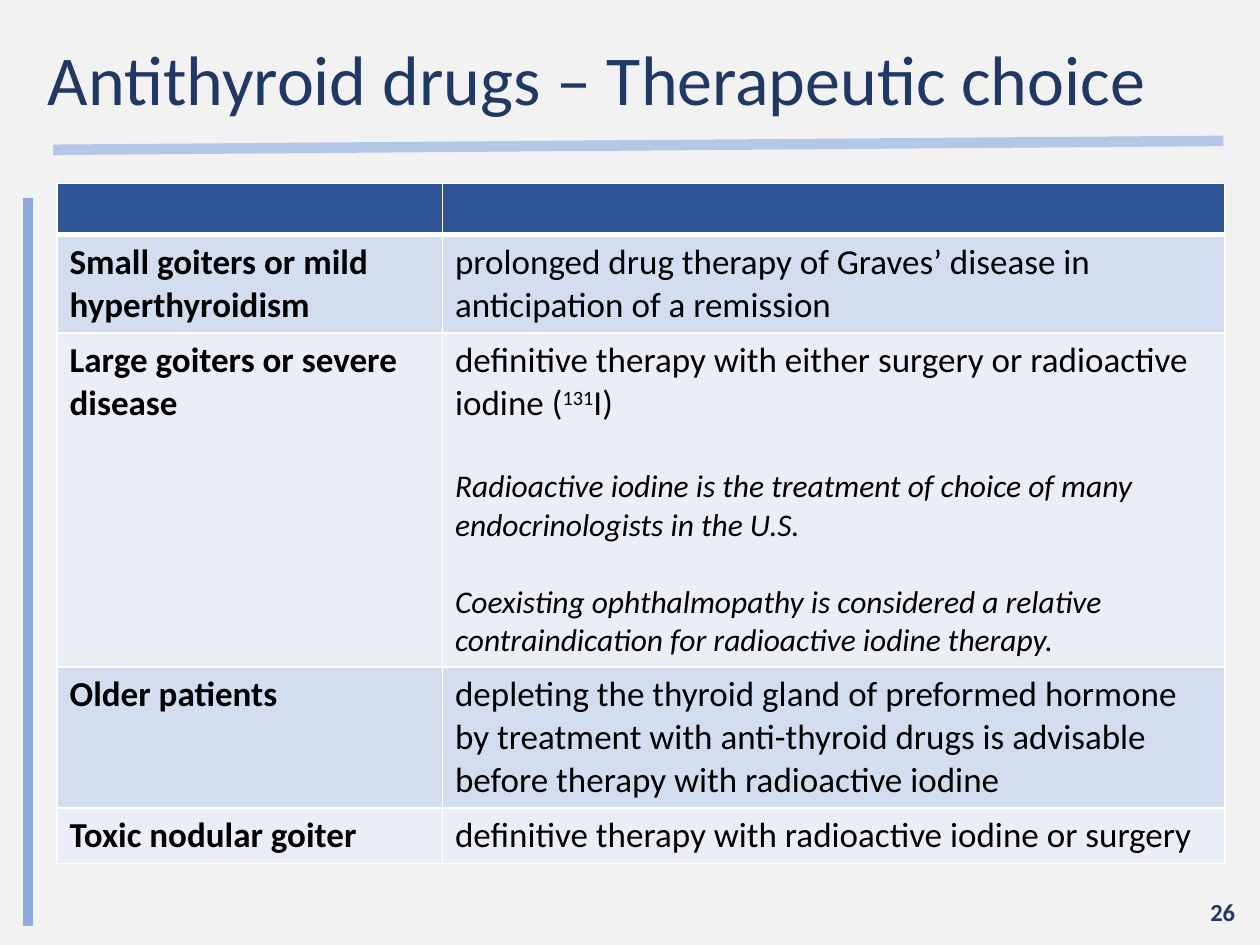
from dataclasses import dataclass

from lxml import etree
from pptx import Presentation
from pptx.dml.color import RGBColor
from pptx.enum import shapes, text
from pptx.oxml import ns
from pptx.util import Cm, Pt


@dataclass(frozen=True)
class Theme:
    font: str = "Calibri"
    background: str = "F2F2F2"
    navy: str = "203864"
    title_rule: str = "B4C7E7"
    side_rule: str = "8FAADC"
    header: str = "2F5597"
    bands: tuple = ("D2DEEF", "EAEFF7")
    border: str = "FFFFFF"
    ink: str = "000000"
    title_size: int = 40
    body_size: int = 20
    note_size: int = 18
    number_size: int = 14


THEME = Theme()
COLUMN_WIDTHS = (7.77, 15.77)
ROW_HEIGHTS = (1.03, 1.98, 6.73, 2.84, 1.12)

# Each choice: patient group, therapy as (text, superscript) pieces, notes
CHOICES = [
    ("Small goiters or mild hyperthyroidism",
     [("prolonged drug therapy of Graves’ disease in anticipation of a remission", False)], []),
    ("Large goiters or severe disease",
     [("definitive therapy with either surgery or radioactive iodine (", False),
      ("131", True), ("I)", False)],
     ["Radioactive iodine is the treatment of choice of many endocrinologists in the U.S.",
      "Coexisting ophthalmopathy is considered a relative contraindication "
      "for radioactive iodine therapy."]),
    ("Older patients",
     [("depleting the thyroid gland of preformed hormone by treatment with anti-thyroid "
       "drugs is advisable before therapy with radioactive iodine", False)], []),
    ("Toxic nodular goiter",
     [("definitive therapy with radioactive iodine or surgery", False)], []),
]


def set_all(target, **values):
    for name, value in values.items():
        setattr(target, name, value)


def add_run(paragraph, content, size, color=THEME.ink, superscript=False, **style):
    run = paragraph.add_run()
    run.text = content
    set_all(run.font, name=THEME.font, size=Pt(size), **style)
    run.font.color.rgb = RGBColor.from_string(color)
    if superscript:
        run._r.get_or_add_rPr().set("baseline", "30000")


def add_rule(slide, start, end, color):
    rule = slide.shapes.add_connector(
        shapes.MSO_CONNECTOR.STRAIGHT, *(Cm(value) for value in start + end))
    rule.line.color.rgb = RGBColor.from_string(color)
    rule.line.width = Pt(6)
    etree.SubElement(rule._element.spPr, ns.qn("a:effectLst"))


def add_title(slide, content):
    title = slide.shapes.title
    set_all(title, left=Cm(0.71), top=Cm(0.03), width=Cm(23.98), height=Cm(3.28))
    title.text_frame.vertical_anchor = text.MSO_ANCHOR.MIDDLE
    paragraph = title.text_frame.paragraphs[0]
    set_all(paragraph, alignment=text.PP_ALIGN.LEFT, line_spacing=0.9)
    add_run(paragraph, content, THEME.title_size, THEME.navy)


def add_page_number(slide, number):
    box = slide.shapes.add_textbox(Cm(19.43), Cm(17.86), Cm(5.72), Cm(1.02))
    set_all(box.text_frame, word_wrap=True, vertical_anchor=text.MSO_ANCHOR.MIDDLE)
    paragraph = box.text_frame.paragraphs[0]
    paragraph.alignment = text.PP_ALIGN.RIGHT
    add_run(paragraph, number, THEME.number_size, THEME.navy, bold=True)


def paint_cell(cell, color, top=1, bottom=1):
    """Fill a cell and draw its borders; top and bottom are widths in points."""
    cell.fill.solid()
    cell.fill.fore_color.rgb = RGBColor.from_string(color)
    properties = cell._tc.get_or_add_tcPr()
    for index, (side, width) in enumerate(zip("LRTB", (1, 1, top, bottom))):
        line = etree.Element(ns.qn(f"a:ln{side}"), w=str(Pt(width)))
        fill = etree.SubElement(line, ns.qn("a:solidFill"))
        etree.SubElement(fill, ns.qn("a:srgbClr"), val=THEME.border)
        properties.insert(index, line)


def fill_therapy(frame, therapy, notes):
    for content, superscript in therapy:
        add_run(frame.paragraphs[0], content, THEME.body_size,
                superscript=superscript, bold=False)
    gap = THEME.body_size
    for note in notes:
        paragraph = frame.add_paragraph()
        paragraph.space_before = Pt(gap * 1.22)
        add_run(paragraph, note, THEME.note_size, bold=False, italic=True)
        gap = THEME.note_size


def add_choice_table(slide):
    table = slide.shapes.add_table(
        len(ROW_HEIGHTS), len(COLUMN_WIDTHS), Cm(1.15), Cm(3.7),
        Cm(sum(COLUMN_WIDTHS)), Cm(sum(ROW_HEIGHTS))).table
    for column, width in zip(table.columns, COLUMN_WIDTHS):
        column.width = Cm(width)
    for row, height in zip(table.rows, ROW_HEIGHTS):
        row.height = Cm(height)

    for cell in table.rows[0].cells:
        paint_cell(cell, THEME.header, bottom=3)
    for index, (group, therapy, notes) in enumerate(CHOICES):
        group_cell, therapy_cell = table.rows[index + 1].cells
        for cell in (group_cell, therapy_cell):
            paint_cell(cell, THEME.bands[index % 2], top=1 if index else 3)
        add_run(group_cell.text_frame.paragraphs[0], group, THEME.body_size, bold=True)
        fill_therapy(therapy_cell.text_frame, therapy, notes)


def main():
    deck = Presentation()
    set_all(deck, slide_width=Cm(25.4), slide_height=Cm(19.05))
    slide = deck.slides.add_slide(deck.slide_layouts.get_by_name("Title Only"))
    slide.background.fill.solid()
    slide.background.fill.fore_color.rgb = RGBColor.from_string(THEME.background)

    add_rule(slide, (1.07, 3.02), (24.66, 2.84), THEME.title_rule)
    add_rule(slide, (0.56, 3.99), (0.56, 18.67), THEME.side_rule)
    add_title(slide, "Antithyroid drugs – Therapeutic choice")
    add_choice_table(slide)
    add_page_number(slide, "26")
    deck.save("out.pptx")


if __name__ == "__main__":
    main()
